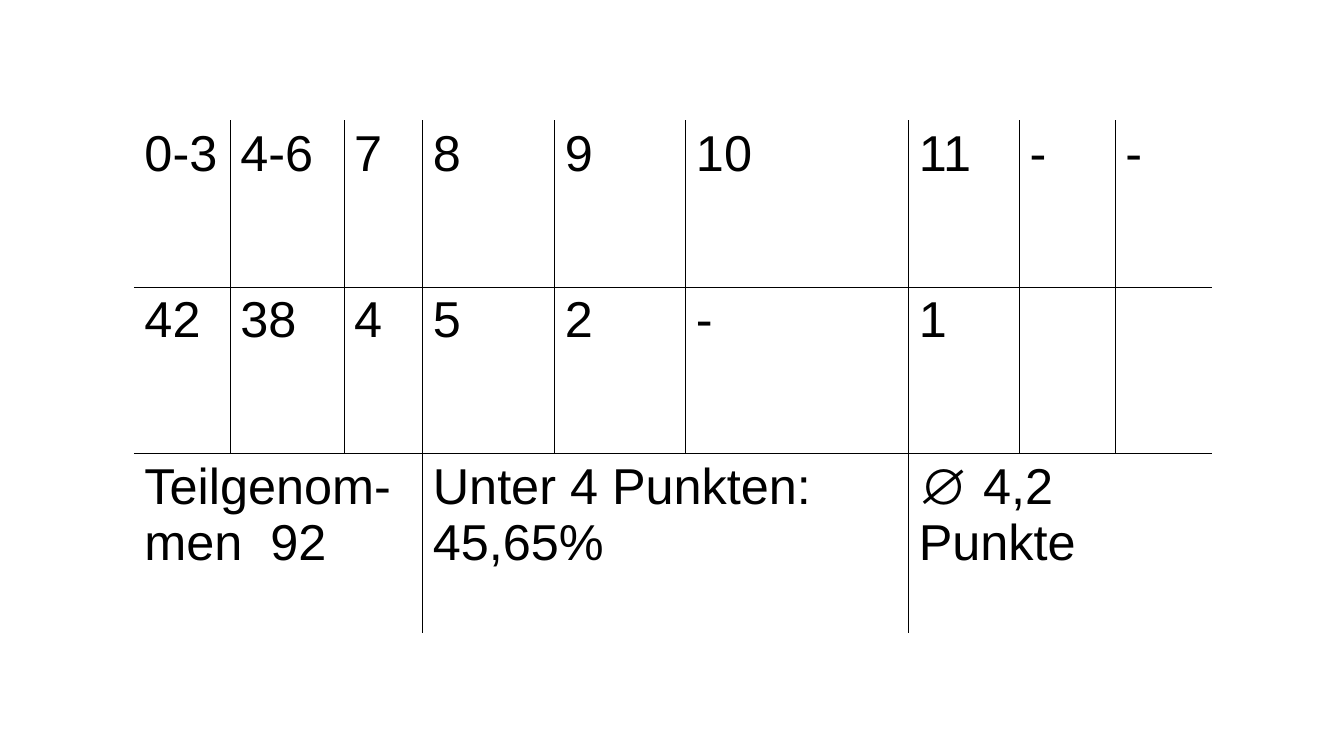
from dataclasses import dataclass

from lxml import etree
from pptx import Presentation
from pptx.dml.color import RGBColor
from pptx.oxml.ns import qn
from pptx.util import Inches, Pt

# Each entry: text and the number of columns it covers
POINTS = [(t, 1) for t in ("0-3", "4-6", "7", "8", "9", "10", "11", "-", "-")]
STUDENTS = [(t, 1) for t in ("42", "38", "4", "5", "2", "-", "1", "", "")]
SUMMARY = [("Teilgenom-men  92", 3), ("Unter 4 Punkten:\n45,65%", 3), ("∅ 4,2 Punkte", 3)]
RESULTS = [POINTS, STUDENTS, SUMMARY]

COLUMN_WIDTHS = [0.95, 1.13, 0.78, 1.31, 1.3, 2.21, 1.1, 0.95, 0.95]
ROW_HEIGHTS = [1.65, 1.65, 1.79]
SLIDE_WIDTH, SLIDE_HEIGHT = 13.33, 7.5
LEFT, TOP = SLIDE_WIDTH * 0.1, SLIDE_HEIGHT * 0.16


@dataclass(frozen=True)
class Theme:
    font: str = "Arial"
    size: int = 36
    ink: str = "000000"
    paper: str = "FFFFFF"
    rule: int = 1


THEME = Theme()


def write(cell, text, *, size=THEME.size, color=THEME.ink, font=THEME.font):
    cell.text = text
    for paragraph in cell.text_frame.paragraphs:
        paragraph.font.size = Pt(size)
        for run in paragraph.runs:
            run.font.size = Pt(size)
            run.font.name = font
            run.font.color.rgb = RGBColor.from_string(color)


def rule_cell(cell, **inner_sides):
    """Draw inner sides in ink and all others in the paper colour."""
    cell.fill.solid()
    cell.fill.fore_color.rgb = RGBColor.from_string(THEME.paper)
    properties = cell._tc.get_or_add_tcPr()
    for position, side in enumerate("LRTB"):
        line = etree.Element(qn(f"a:ln{side}"), w=str(Pt(THEME.rule)))
        fill = etree.SubElement(line, qn("a:solidFill"))
        color = THEME.ink if inner_sides[side] else THEME.paper
        etree.SubElement(fill, qn("a:srgbClr"), val=color)
        properties.insert(position, line)


def fill_row(table, row, entries):
    last_row, column_count = len(ROW_HEIGHTS) - 1, len(COLUMN_WIDTHS)
    start = 0
    for text, span in entries:
        end = start + span
        for column in range(start, end):
            first = column == start
            rule_cell(
                table.cell(row, column),
                L=first and start > 0,
                R=(first or column == end - 1) and end < column_count,
                T=row > 0,
                B=row < last_row,
            )
        origin = table.cell(row, start)
        if span > 1:
            origin.merge(table.cell(row, end - 1))
        write(origin, text)
        start = end


def main():
    deck = Presentation()
    deck.slide_width, deck.slide_height = Inches(SLIDE_WIDTH), Inches(SLIDE_HEIGHT)
    slide = deck.slides.add_slide(deck.slide_layouts[6])
    table = slide.shapes.add_table(
        len(ROW_HEIGHTS), len(COLUMN_WIDTHS), Inches(LEFT), Inches(TOP),
        Inches(sum(COLUMN_WIDTHS)), Inches(sum(ROW_HEIGHTS)),
    ).table
    table.first_row = table.horz_banding = False
    for column, width in zip(table.columns, COLUMN_WIDTHS):
        column.width = Inches(width)
    for row, height in zip(table.rows, ROW_HEIGHTS):
        row.height = Inches(height)
    for row, entries in enumerate(RESULTS):
        fill_row(table, row, entries)
    deck.save("out.pptx")


if __name__ == "__main__":
    main()
